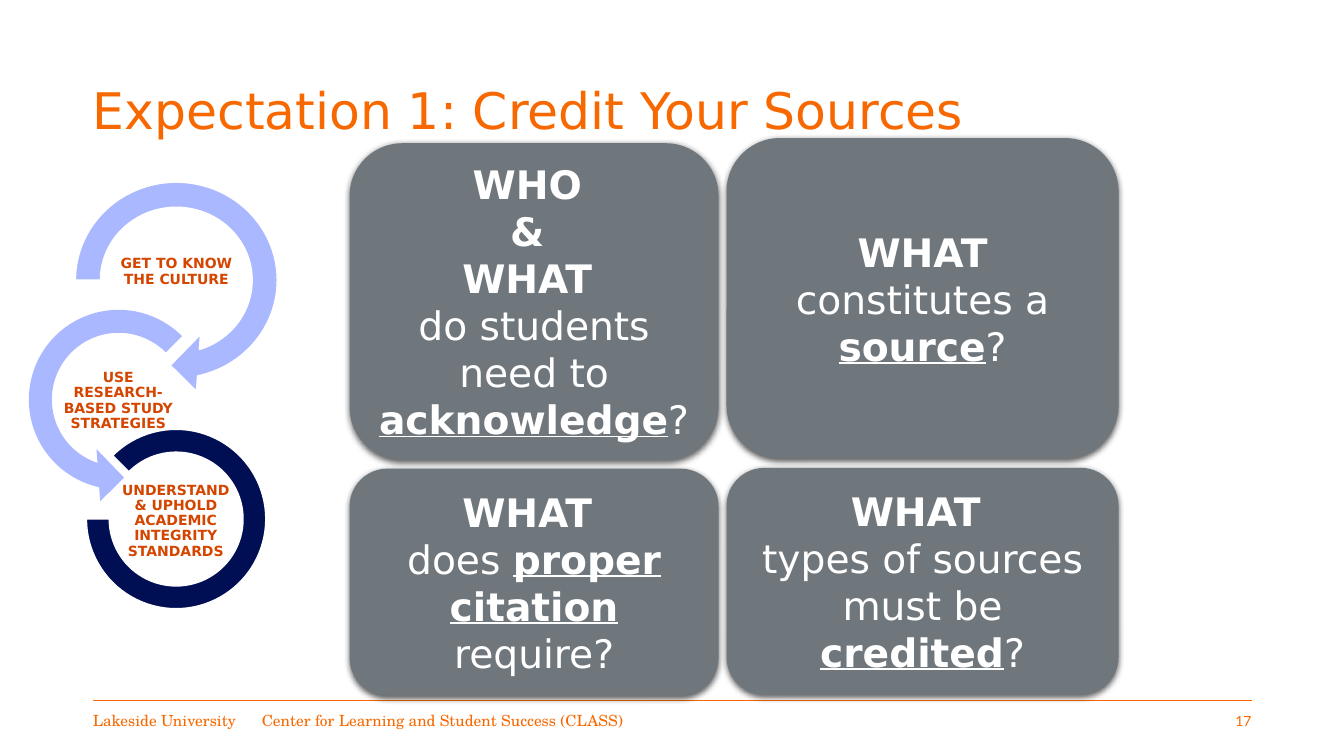
import pptx
import pptx.dml.color
import pptx.enum.shapes
import pptx.enum.text
import pptx.oxml
import pptx.oxml.ns
import pptx.util

Cm = pptx.util.Cm
Pt = pptx.util.Pt
SHAPE = pptx.enum.shapes.MSO_SHAPE
ALIGN = pptx.enum.text.PP_ALIGN

ORANGE = "F76900"
RUST = "D44500"
LAVENDER = "AAB8FF"
NAVY = "000E54"
GRAY = "6F777D"
WHITE = "FFFFFF"
SANS = "DejaVu Sans"
SERIF = "TeX Gyre Schola"


def color(value):
    return pptx.dml.color.RGBColor.from_string(value)


def write(shape, paragraphs, size, font, ink, align, insets, spacing=1.0, wrap=True):
    frame = shape.text_frame
    frame.word_wrap = wrap
    frame.vertical_anchor = pptx.enum.text.MSO_ANCHOR.MIDDLE
    frame.margin_left = frame.margin_right = Cm(insets[0])
    frame.margin_top = frame.margin_bottom = Cm(insets[1])
    for index, spans in enumerate(paragraphs):
        para = frame.add_paragraph() if index else frame.paragraphs[0]
        para.alignment = align
        para.line_spacing = spacing
        for text, style in spans:
            span = para.add_run()
            span.text = text
            span.font.size = Pt(size)
            span.font.name = font
            span.font.color.rgb = color(ink)
            span.font.bold = "b" in style
            span.font.underline = "u" in style


deck = pptx.Presentation()
deck.slide_width = Cm(33.87)
deck.slide_height = Cm(19.05)
page = deck.slides.add_slide(deck.slide_layouts[6])

rule = page.shapes.add_connector(
    pptx.enum.shapes.MSO_CONNECTOR.STRAIGHT, Cm(2.34), Cm(17.65), Cm(31.55), Cm(17.65))
rule.line.color.rgb = color(ORANGE)
rule.line.width = Pt(0.5)
rule._element.spPr.append(pptx.oxml.parse_xml(
    f'<a:effectLst {pptx.oxml.ns.nsdecls("a")}/>'))

footers = [
    ("Lakeside University", 2.34, 4.2, 11, SERIF, ALIGN.LEFT),
    ("Center for Learning and Student Success (CLASS)", 6.6, 9.3, 11, SERIF, ALIGN.LEFT),
    ("17", 26.21, 5.33, 10, "Lato", ALIGN.RIGHT),
]
for text, left, width, size, font, align in footers:
    box = page.shapes.add_textbox(Cm(left), Cm(17.65), Cm(width), Cm(1.02))
    write(box, [[(text, "")]], size, font, ORANGE, align, (0, 0.13))

title = page.shapes.add_textbox(Cm(2.34), Cm(1.02), Cm(29.21), Cm(3.68))
write(title, [[("Expectation 1: Credit Your Sources", "")]],
      36, SANS, ORANGE, ALIGN.LEFT, (0, 0.13), 0.9)

steps = [
    (SHAPE.CIRCULAR_ARROW, (1.5, 4.19, 5.89, 5.74), (0.11, 11.423, 45, 108, 0.125),
     LAVENDER, True, "GET TO KNOW THE CULTURE", (2.82, 5.56, 3.25, 2.59)),
    (SHAPE.LEFT_CIRCULAR_ARROW, (0.36, 7.44, 5.26, 5.26), (0.11, 11.423, 63, 189, 0.125),
     LAVENDER, False, "USE RESEARCH-BASED STUDY STRATEGIES", (1.52, 9.37, 2.92, 1.47)),
    (SHAPE.BLOCK_ARC, (2.18, 10.82, 4.52, 4.52), (135, 108, 0.127),
     NAVY, True, "UNDERSTAND & UPHOLD ACADEMIC INTEGRITY STANDARDS", (2.97, 12.4, 2.92, 1.47)),
]
for kind, place, adjustments, fill, outlined, label, label_place in steps:
    arc = page.shapes.add_shape(kind, *map(Cm, place))
    for index, value in enumerate(adjustments):
        arc.adjustments[index] = value
    arc.shadow.inherit = False
    arc.fill.solid()
    arc.fill.fore_color.rgb = color(fill)
    if outlined:
        arc.line.color.rgb = color(WHITE)
        arc.line.width = Pt(1)
    else:
        arc.line.fill.background()
    box = page.shapes.add_textbox(*map(Cm, label_place))
    write(box, [[(label, "b")]], 10, SANS, RUST, ALIGN.CENTER, (0.03, 0.03), 0.9)

cards = [
    ((8.81, 3.61, 9.3, 7.98), [
        [("WHO ", "b")],
        [("& ", "b")],
        [("WHAT ", "b")],
        [("do students need to ", ""), ("acknowledge", "bu"), ("? ", "")]]),
    ((18.31, 3.48, 9.88, 8.08), [
        [("WHAT", "b"), (" constitutes a ", ""), ("source", "bu"), ("?", "")]]),
    ((8.81, 11.81, 9.3, 5.72), [
        [("WHAT ", "b")],
        [("does ", ""), ("proper citation", "bu"), (" ", "b"), ("require?", "")]]),
    ((18.31, 11.79, 9.88, 5.72), [
        [("WHAT ", "b")],
        [("types of sources must be ", ""), ("credited", "bu"), ("?", "")]]),
]
for place, paragraphs in cards:
    card = page.shapes.add_shape(SHAPE.ROUNDED_RECTANGLE, *map(Cm, place))
    card.fill.solid()
    card.fill.fore_color.rgb = color(GRAY)
    card.line.fill.background()
    card.shadow.inherit = False
    effects = card._element.spPr.find(pptx.oxml.ns.qn("a:effectLst"))
    effects.append(pptx.oxml.parse_xml(
        f'<a:outerShdw {pptx.oxml.ns.nsdecls("a")} blurRad="{Pt(4.5)}" dist="{Pt(1.5)}" '
        'dir="5400000" rotWithShape="0"><a:srgbClr val="000000">'
        '<a:alpha val="63000"/></a:srgbClr></a:outerShdw>'))
    write(card, paragraphs, 28, SANS, WHITE, ALIGN.CENTER, (0.25, 0.13))

deck.save("out.pptx")
